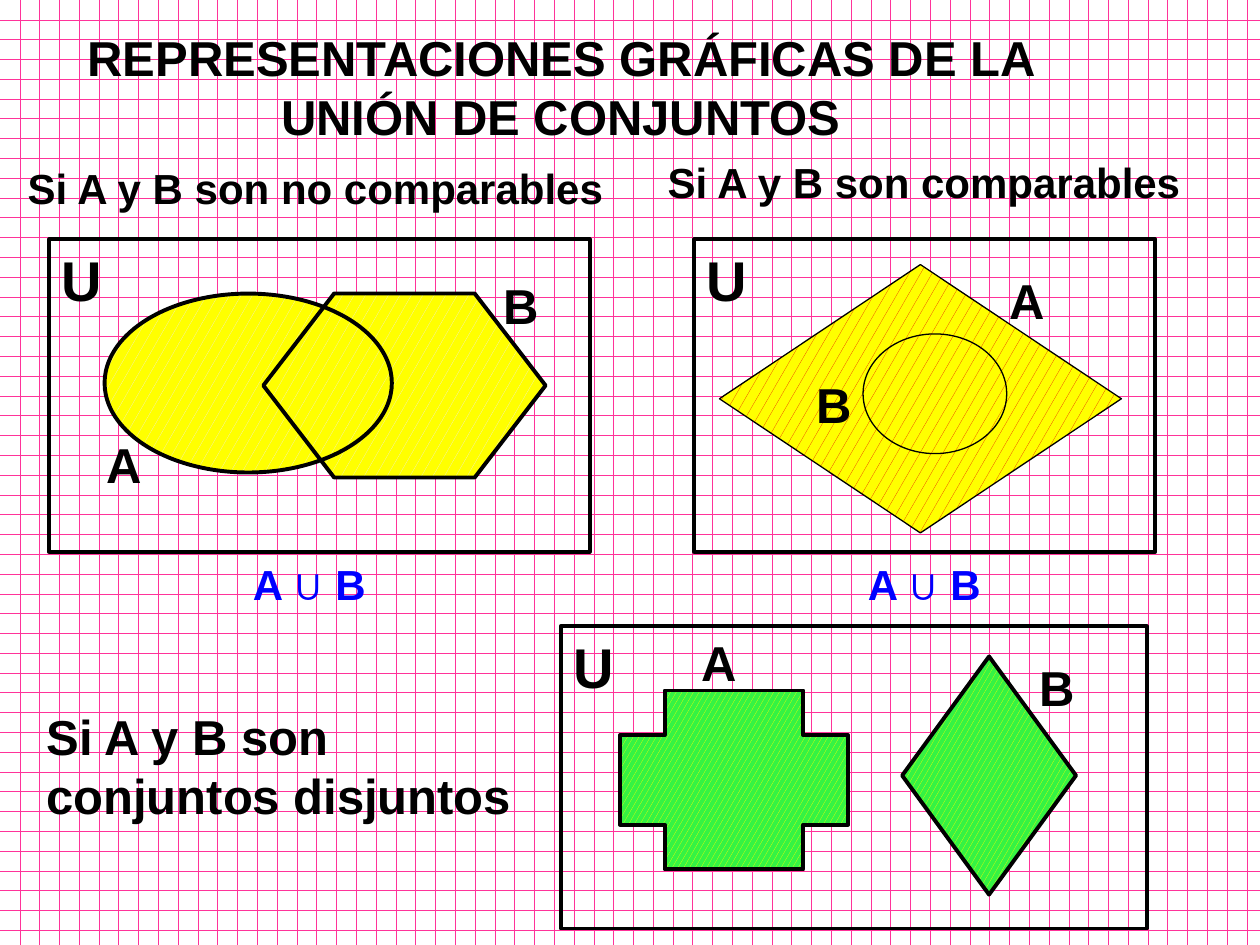
from lxml.etree import SubElement
from pptx import Presentation
from pptx.dml.color import RGBColor
from pptx.enum.dml import MSO_PATTERN as Pattern
from pptx.enum.shapes import MSO_SHAPE as Shape
from pptx.enum.text import MSO_AUTO_SIZE as AutoSize, PP_ALIGN as Align
from pptx.oxml.ns import qn
from pptx.util import Inches, Pt

THEME = {
    "font": "Arial",
    "ink": "000000", "union": "0000FF",
    "heading": 28, "subheading": 24, "universe": 32, "set": 28,
    "thin": 0.75, "thick": 2.25,
    # pattern, foreground, background
    "backdrop": (Pattern.DOTTED_GRID, "FF3399", "FFFFFF"),
    "overlap": (Pattern.SMALL_CONFETTI, "EEECE1", "FFFF00"),
    "nested": (Pattern.SMALL_CONFETTI, "E71505", "FFFF00"),
    "disjoint": (Pattern.LARGE_CONFETTI, "FFFF00", "35F343"),
}

# Every place is (column, row, columns, rows) on a grid of 100 by 75 squares.
COLUMNS, ROWS = 100, 75
SQUARE = Inches(10) / COLUMNS

HEADINGS = [  # text, place, size, alignment
    ("REPRESENTACIONES GRÁFICAS DE LA UNIÓN DE CONJUNTOS",
     (2, 1.7, 85, 10.3), "heading", Align.CENTER),
    ("Si A y B son no comparables", (1.2, 12.4, 48.8, 5), "subheading", Align.LEFT),
    ("Si A y B son comparables", (52, 11.9, 44.1, 5), "subheading", Align.LEFT),
    ("Si A y B son conjuntos disjuntos", (2.7, 55.6, 39.8, 10.3), "heading", Align.LEFT),
]
UNIVERSES = [(3.9, 19, 42.9, 24.8), (55.1, 19, 36.6, 24.8), (44.5, 49.7, 46.5, 24)]
UNIVERSE_LABEL = (5.9, 6.3)

LEFT_A = (Shape.OVAL, (8.3, 23.3, 22.8, 14.2), ())
LEFT_B = (Shape.HEXAGON, (20.9, 23.3, 22.4, 14.6), (0.385, 1.155))
RIGHT_A = (Shape.DIAMOND, (57.1, 21, 31.9, 21.3), ())
RIGHT_B = (Shape.OVAL, (68.5, 26.5, 11.4, 9.5), ())
LOWER_A = (Shape.CROSS, (49.2, 54.8, 18.1, 14.2), (0.25,))
LOWER_B = (Shape.DIAMOND, (71.6, 52.1, 13.8, 18.9), ())
SETS = [  # figure, fill, outline; fills come before the outlines that cross them
    (LEFT_A, "overlap", "thin"), (LEFT_B, "overlap", "thin"),
    (LEFT_A, None, "thick"), (LEFT_B, None, "thick"),
    (RIGHT_A, "nested", "thin"), (RIGHT_B, None, "thin"),
    (LOWER_A, "disjoint", "thick"), (LOWER_B, "disjoint", "thick"),
]
SET_LABELS = [  # text, column, row
    ("A", 7.5, 34), ("B", 39, 21.4), ("A", 79.1, 21),
    ("B", 63.8, 29.2), ("A", 54.7, 49.7), ("B", 81.5, 51.7),
]
SET_LABEL = (9.8, 5.7)
UNIONS = [("A ∪ B", (19.1, 43.8, 11.4, 5)), ("A ∪ B", (67.9, 43.8, 12.2, 5))]


def on_grid(place):
    return [round(length * SQUARE) for length in place]


def apply_pattern(fill, name):
    pattern, front, back = THEME[name]
    fill.patterned()
    fill.pattern = pattern
    fill.fore_color.rgb = RGBColor.from_string(front)
    fill.back_color.rgb = RGBColor.from_string(back)


def add_figure(slide, kind, place, adjustments=(), fill=None, outline="thick"):
    figure = slide.shapes.add_shape(kind, *on_grid(place))
    figure.shadow.inherit = False
    for index, value in enumerate(adjustments):
        figure.adjustments[index] = value
    if fill:
        apply_pattern(figure.fill, fill)
    else:
        figure.fill.background()
    figure.line.color.rgb = RGBColor.from_string(THEME["ink"])
    figure.line.width = Pt(THEME[outline])


def add_text(slide, text, place, size="set", color="ink", align=Align.LEFT):
    frame = slide.shapes.add_textbox(*on_grid(place)).text_frame
    frame.word_wrap = True
    frame.auto_size = AutoSize.SHAPE_TO_FIT_TEXT
    paragraph = frame.paragraphs[0]
    paragraph.alignment = align
    # Space before, relative to the line height
    before = SubElement(paragraph._p.get_or_add_pPr(), qn("a:spcBef"))
    SubElement(before, qn("a:spcPct"), val="50000")
    run = paragraph.add_run()
    run.text = text
    run.font.name = THEME["font"]
    run.font.size = Pt(THEME[size])
    run.font.bold = True
    run.font.color.rgb = RGBColor.from_string(THEME[color])


def main():
    deck = Presentation()
    deck.slide_width = round(COLUMNS * SQUARE)
    deck.slide_height = round(ROWS * SQUARE)
    slide = deck.slides.add_slide(deck.slide_layouts[6])
    apply_pattern(slide.background.fill, "backdrop")

    for universe in UNIVERSES:
        add_figure(slide, Shape.RECTANGLE, universe)
    for (kind, place, adjustments), fill, outline in SETS:
        add_figure(slide, kind, place, adjustments, fill, outline)

    for text, place, size, align in HEADINGS:
        add_text(slide, text, place, size=size, align=align)
    for universe in UNIVERSES:
        add_text(slide, "U", universe[:2] + UNIVERSE_LABEL, size="universe")
    for text, column, row in SET_LABELS:
        add_text(slide, text, (column, row) + SET_LABEL)
    for text, place in UNIONS:
        add_text(slide, text, place, size="subheading", color="union")

    deck.save("out.pptx")


if __name__ == "__main__":
    main()
